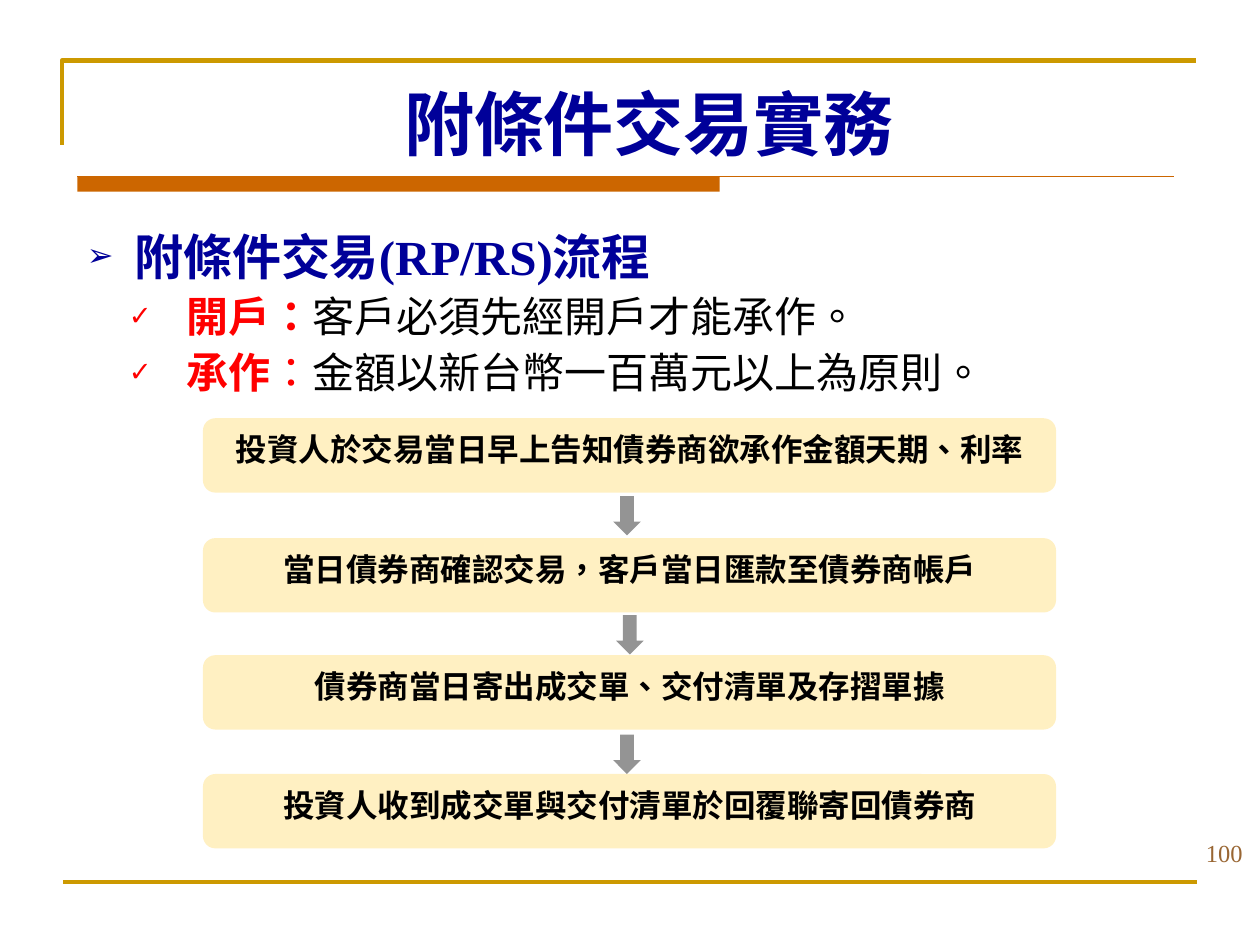
from dataclasses import dataclass

from lxml.etree import SubElement
from pptx import Presentation
from pptx.dml.color import RGBColor as Rgb
from pptx.enum.shapes import MSO_CONNECTOR as Connector, MSO_SHAPE as Preset
from pptx.enum.text import MSO_ANCHOR as Anchor, MSO_AUTO_SIZE as AutoSize, PP_ALIGN as Align
from pptx.oxml.ns import qn
from pptx.util import Pt


@dataclass(frozen=True)
class Theme:
    navy: str = "000099"
    red: str = "FF0000"
    black: str = "000000"
    gold: str = "CC9900"
    orange: str = "CC6600"
    brown: str = "996633"
    cream: str = "FFF0C2"
    latin: str = "Times New Roman"
    chinese: str = "Noto Sans CJK SC"
    title_size: int = 40
    heading_size: int = 28
    item_size: int = 24
    step_size: int = 18
    page_size: int = 14


@dataclass(frozen=True)
class Step:
    text: str
    top: float


@dataclass(frozen=True)
class Arrow:
    left: float
    top: float


THEME = Theme()
STEP_LEFT, STEP_WIDTH, STEP_HEIGHT = 116, 487.5, 42.5
ARROW_WIDTH, ARROW_HEIGHT = 15.8, 22.5

STEPS = [
    Step("投資人於交易當日早上告知債券商欲承作金額天期、利率", 239),
    Step("當日債券商確認交易，客戶當日匯款至債券商帳戶", 307.5),
    Step("債券商當日寄出成交單、交付清單及存摺單據", 374.4),
    Step("投資人收到成交單與交付清單於回覆聯寄回債券商", 442.3),
]
ARROWS = [Arrow(350.4, 283.5), Arrow(352, 351.5), Arrow(350.4, 419.8)]


def add_span(para, text: str, *, size: float, color: str, bold: bool = False,
             latin: str = THEME.latin) -> None:
    """Add a run of text in the given format."""
    span = para.add_run()
    span.text = text
    font = span.font
    font.name, font.size, font.bold = latin, Pt(size), bold
    font.color.rgb = Rgb.from_string(color)
    properties = span._r.get_or_add_rPr()
    properties.set("lang", "zh-TW")
    east_asian = SubElement(properties, qn("a:ea"))
    east_asian.set("typeface", THEME.chinese)


def set_para(para, *, align=Align.LEFT, line: float | None = None, before: float = 0) -> None:
    para.alignment = align
    para.space_before = Pt(before)
    if line:
        para.line_spacing = Pt(line)


def set_bullet(para, mark: str, *, margin: float, hanging: float) -> None:
    properties = para._p.get_or_add_pPr()
    properties.set("marL", str(Pt(margin)))
    properties.set("indent", str(-Pt(hanging)))
    SubElement(properties, qn("a:buSzPct")).set("val", "65000")
    SubElement(properties, qn("a:buChar")).set("char", mark)


def place(shape, left: float, top: float, width: float, height: float) -> None:
    shape.left, shape.top = Pt(left), Pt(top)
    shape.width, shape.height = Pt(width), Pt(height)


def set_frame(frame, anchor=Anchor.TOP) -> None:
    frame.word_wrap = True
    frame.auto_size = AutoSize.NONE
    frame.vertical_anchor = anchor


def add_filled(slide, preset, left: float, top: float, width: float, height: float, color: str):
    """Add a preset shape with a plain fill and no outline."""
    shape = slide.shapes.add_shape(preset, Pt(left), Pt(top), Pt(width), Pt(height))
    shape.shadow.inherit = False
    shape.fill.solid()
    shape.fill.fore_color.rgb = Rgb.from_string(color)
    shape.line.fill.background()
    return shape


def add_rule(slide, left: float, right: float, y: float, color: str, weight: float) -> None:
    rule = slide.shapes.add_connector(Connector.STRAIGHT, Pt(left), Pt(y), Pt(right), Pt(y))
    rule.line.color.rgb = Rgb.from_string(color)
    rule.line.width = Pt(weight)
    SubElement(rule._element.spPr, qn("a:effectLst"))


def add_corner(slide) -> None:
    builder = slide.shapes.build_freeform(Pt(35.3), Pt(82.8))
    builder.add_line_segments([(Pt(35.3), Pt(34.6)), (Pt(683.3), Pt(34.6))], close=False)
    corner = builder.convert_to_shape()
    corner.shadow.inherit = False
    corner.fill.background()
    corner.line.color.rgb = Rgb.from_string(THEME.gold)
    corner.line.width = Pt(2.5)


def add_step(slide, step: Step) -> None:
    box = add_filled(slide, Preset.ROUNDED_RECTANGLE, STEP_LEFT, step.top,
                     STEP_WIDTH, STEP_HEIGHT, THEME.cream)
    set_frame(box.text_frame)
    para = box.text_frame.paragraphs[0]
    set_para(para, align=Align.CENTER, line=23)
    add_span(para, step.text, size=THEME.step_size, color=THEME.black, bold=True,
             latin=THEME.chinese)


def add_arrow(slide, arrow: Arrow) -> None:
    shape = add_filled(slide, Preset.DOWN_ARROW, arrow.left, arrow.top,
                       ARROW_WIDTH, ARROW_HEIGHT, THEME.black)
    color = shape._element.spPr.find(qn("a:solidFill")).find(qn("a:srgbClr"))
    SubElement(color, qn("a:alpha")).set("val", "42000")


def fill_title(title) -> None:
    place(title, 46.8, 37.4, 648, 67.7)
    set_frame(title.text_frame)
    para = title.text_frame.paragraphs[0]
    set_para(para, align=Align.CENTER, line=53)
    add_span(para, "附條件交易實務", size=THEME.title_size, color=THEME.navy, bold=True,
             latin=THEME.chinese)


def fill_body(body) -> None:
    place(body, 42.5, 122.4, 629.3, 336.2)
    frame = body.text_frame
    set_frame(frame)
    heading = frame.paragraphs[0]
    set_para(heading, line=37)
    set_bullet(heading, "➢", margin=27, hanging=27)
    add_span(heading, "附條件交易(RP/RS)流程", size=THEME.heading_size, color=THEME.navy, bold=True)

    # Each item is a list of text, colour and weight
    items = [
        [("開戶：", THEME.red, True), ("客戶必須先經開戶才能承作。", THEME.black, False)],
        [("承作", THEME.red, True), ("：", THEME.red, False),
         ("金額以新台幣一百萬元以上為原則。", THEME.black, False)],
    ]
    for item in items:
        para = frame.add_paragraph()
        para.level = 1
        set_para(para, line=26, before=6)
        set_bullet(para, "✓", margin=57, hanging=33)
        for text, color, bold in item:
            add_span(para, text, size=THEME.item_size, color=color, bold=bold)


def add_page_number(slide) -> None:
    box = slide.shapes.add_textbox(Pt(549.4), Pt(463), Pt(167.8), Pt(36))
    set_frame(box.text_frame, Anchor.BOTTOM)
    para = box.text_frame.paragraphs[0]
    set_para(para, align=Align.RIGHT)
    add_span(para, "100", size=THEME.page_size, color=THEME.brown)


def main() -> None:
    deck = Presentation()
    deck.slide_width, deck.slide_height = Pt(720), Pt(540)
    slide = deck.slides.add_slide(deck.slide_layouts[1])

    # Frame lines
    add_corner(slide)
    add_rule(slide, 36, 684, 504, THEME.gold, 2)

    # Title and list
    fill_title(slide.shapes.title)
    fill_body(slide.placeholders[1])
    add_page_number(slide)

    # Bar and thin rule under the title
    add_filled(slide, Preset.RECTANGLE, 44.2, 100.8, 367, 8.8, THEME.orange)
    add_rule(slide, 44.2, 671, 100.8, THEME.orange, 0.75)

    # Trading flow
    for step in STEPS:
        add_step(slide, step)
    for arrow in ARROWS:
        add_arrow(slide, arrow)

    deck.save("out.pptx")


if __name__ == "__main__":
    main()
